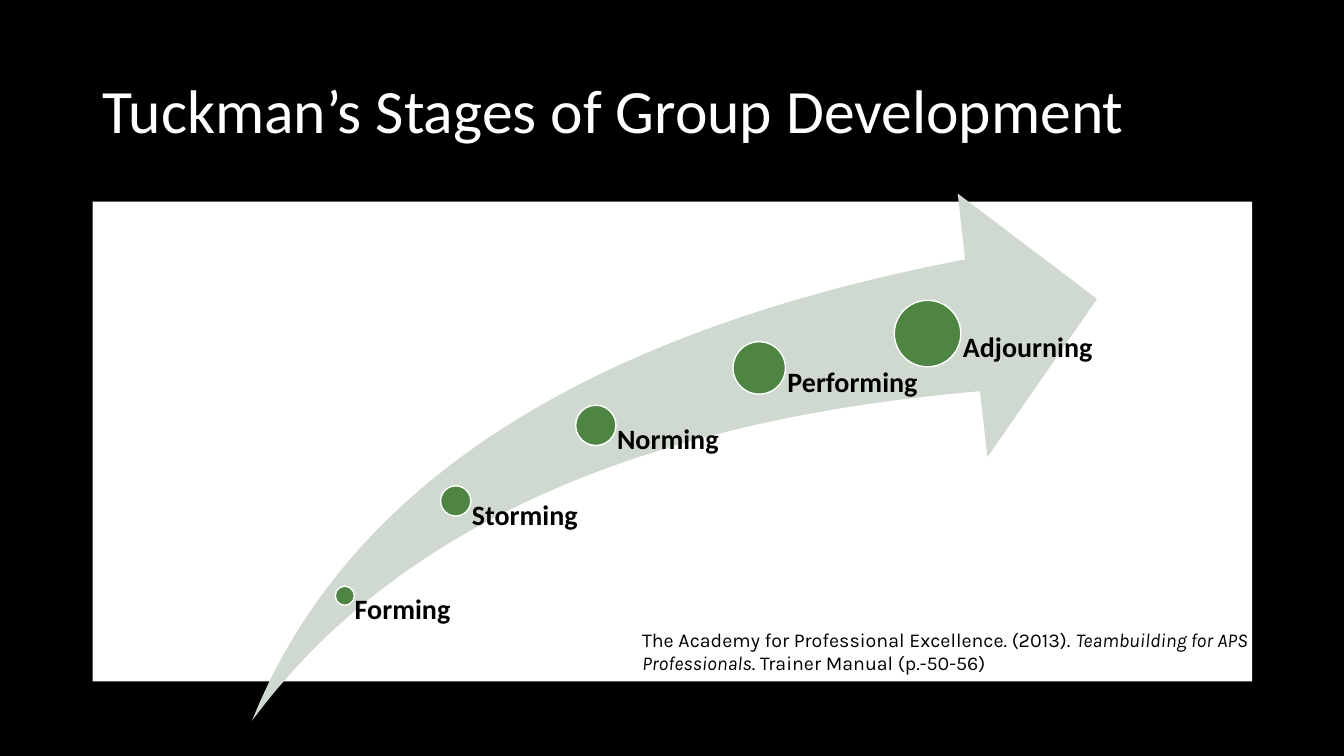
from pptx import Presentation
from pptx import util as u
from pptx.dml.color import RGBColor
from pptx.enum import shapes, text

BLACK = RGBColor(0x00, 0x00, 0x00)
WHITE = RGBColor(0xFF, 0xFF, 0xFF)
SAGE = RGBColor(0xD0, 0xD9, 0xCF)
GREEN = RGBColor(0x4E, 0x85, 0x42)
SHAPE = shapes.MSO_SHAPE
LABEL_BOTTOM = 7.16


def add_text(s, box, runs, size, font="Calibri", color=BLACK, bold=False,
             anchor=text.MSO_ANCHOR.TOP, insets=(0.1, 0.05, 0.1, 0.05), spacing=0.9):
    tf = s.shapes.add_textbox(*map(u.Inches, box)).text_frame
    tf.word_wrap = True
    tf.vertical_anchor = anchor
    tf.margin_left, tf.margin_top, tf.margin_right, tf.margin_bottom = map(u.Inches, insets)
    p = tf.paragraphs[0]
    p.line_spacing = spacing
    for words, italic in runs:
        r = p.add_run()
        r.text = words
        r.font.size = u.Pt(size)
        r.font.name = font
        r.font.color.rgb = color
        r.font.bold = bold
        r.font.italic = italic


def add_filled(s, kind, box, fill, line=None):
    sp = s.shapes.add_shape(kind, *map(u.Inches, box))
    sp.shadow.inherit = False
    sp.fill.solid()
    sp.fill.fore_color.rgb = fill
    if line is None:
        sp.line.fill.background()
    else:
        sp.line.color.rgb = line
        sp.line.width = u.Pt(1)
    return sp


prs = Presentation()
prs.slide_width = u.Inches(13.33)
prs.slide_height = u.Inches(7.5)
s = prs.slides.add_slide(prs.slide_layouts[6])
s.background.fill.solid()
s.background.fill.fore_color.rgb = BLACK

add_text(s, (0.92, 0.4, 11.5, 1.45), [("Tuckman’s Stages of Group Development", False)], 44,
         color=WHITE, anchor=text.MSO_ANCHOR.MIDDLE)

add_filled(s, SHAPE.RECTANGLE, (0.92, 2, 11.5, 4.76), WHITE)
arrow = add_filled(s, SHAPE.SWOOSH_ARROW, (2.5, 1.92, 8.38, 5.23), SAGE)
arrow.adjustments[0] = 0.25
arrow.adjustments[1] = 0.25

stages = [
    ("Forming", 3.42, 5.91, 0.19, 1.1, 0.1),
    ("Storming", 4.52, 4.97, 0.3, 1.39, 0.16),
    ("Norming", 5.91, 4.22, 0.4, 1.62, 0.21),
    ("Performing", 7.53, 3.65, 0.52, 1.68, 0.28),
    ("Adjourning", 9.2, 3.31, 0.66, 1.68, 0.35),
]
for name, x, y, dot, width, inset in stages:
    add_filled(s, SHAPE.OVAL, (x - dot / 2, y - dot / 2, dot, dot), GREEN, WHITE)
    add_text(s, (x, y, width, LABEL_BOTTOM - y), [(name, False)], 20,
             bold=True, insets=(inset, 0, 0, 0))

citation = [
    ("The Academy for Professional Excellence. (2013). ", False),
    ("Teambuilding for APS Professionals", True),
    (". Trainer Manual (p.-50-56)", False),
]
add_text(s, (6.27, 6.18, 6.67, 0.57), citation, 14, font="Karla", spacing=1.0)

prs.save("out.pptx")
